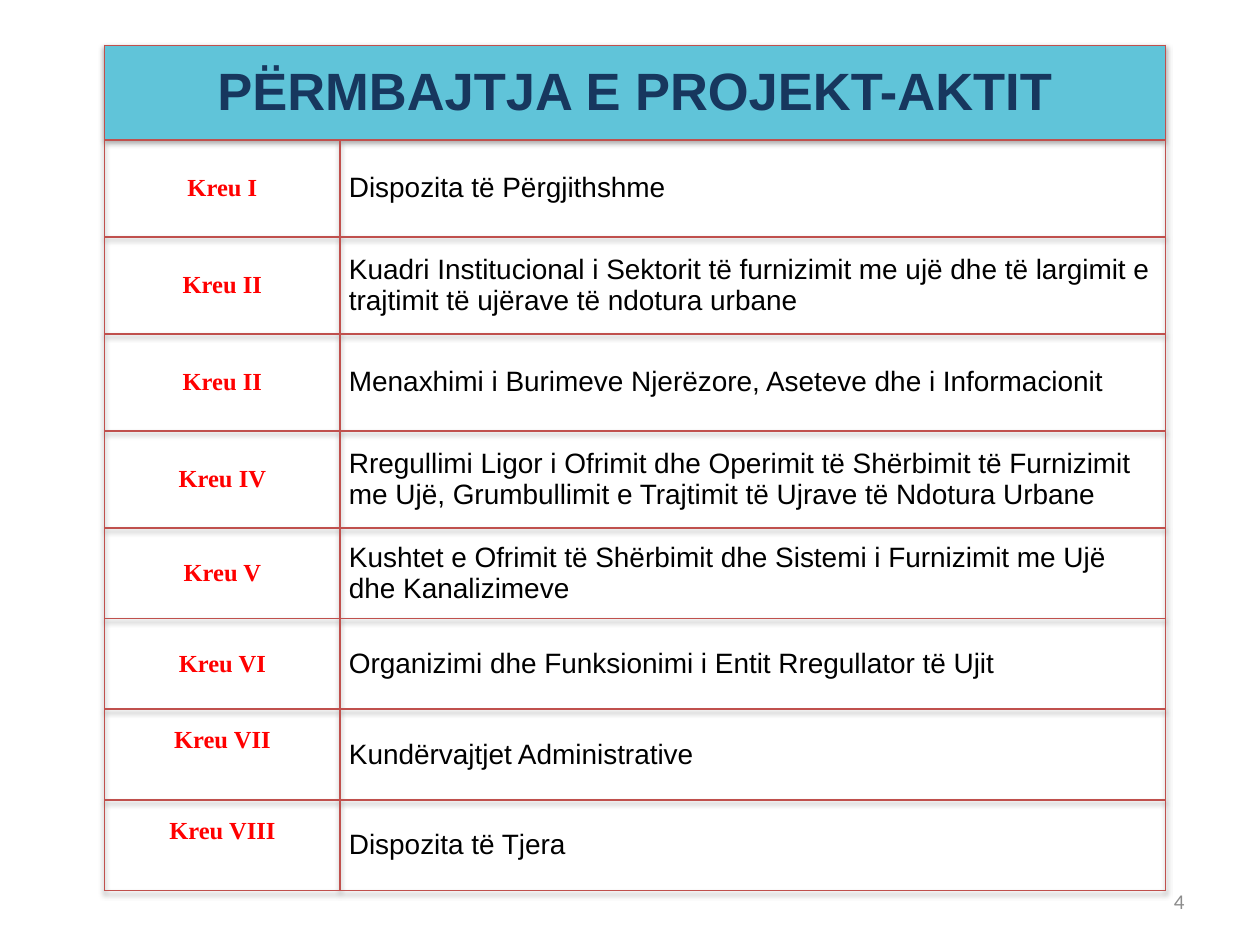
import pptx
import pptx.dml.color
import pptx.enum.text
import pptx.oxml
import pptx.oxml.ns
import pptx.util

Inches = pptx.util.Inches
Pt = pptx.util.Pt
RGBColor = pptx.dml.color.RGBColor
ALIGN = pptx.enum.text.PP_ALIGN
MIDDLE = pptx.enum.text.MSO_ANCHOR.MIDDLE

NAVY = RGBColor(0x17, 0x37, 0x5E)
AQUA = RGBColor(0x60, 0xC4, 0xD9)
RED = RGBColor(0xFF, 0x00, 0x00)
BLACK = RGBColor(0x00, 0x00, 0x00)
GREY = RGBColor(0x8C, 0x8C, 0x8C)
BORDER = RGBColor(0xC0, 0x50, 0x4D)
NAMESPACE = pptx.oxml.ns.nsdecls("a")

TITLE = "PËRMBAJTJA E PROJEKT-AKTIT"
CHAPTERS = [
    ("Kreu I", "Dispozita të Përgjithshme"),
    ("Kreu II", "Kuadri Institucional i Sektorit të furnizimit me ujë dhe të "
                "largimit e trajtimit të ujërave të ndotura urbane"),
    ("Kreu II", "Menaxhimi i Burimeve Njerëzore, Aseteve dhe i Informacionit"),
    ("Kreu IV", "Rregullimi Ligor i Ofrimit dhe Operimit të Shërbimit të Furnizimit "
                "me Ujë, Grumbullimit e Trajtimit të Ujrave të Ndotura Urbane"),
    ("Kreu V", "Kushtet e Ofrimit të Shërbimit dhe Sistemi i Furnizimit me Ujë "
               "dhe Kanalizimeve"),
    ("Kreu VI", "Organizimi dhe Funksionimi i Entit Rregullator të Ujit"),
    ("Kreu VII", "Kundërvajtjet Administrative"),
    ("Kreu VIII", "Dispozita të Tjera"),
]
COLUMN_WIDTHS = [1.87, 6.55]
ROW_HEIGHTS = [0.75] + [0.77] * 4 + [0.72] * 4
RAISED_ROWS = (7, 8)  # chapter labels that sit above the middle


class ContentsSlide:
    def __init__(self, presentation):
        self.slide = presentation.slides.add_slide(presentation.slide_layouts[6])

    def set_text(self, frame, text, font, size, color, bold=False, align=ALIGN.LEFT):
        paragraph = frame.paragraphs[0]
        paragraph.text = text
        paragraph.alignment = align
        paragraph.font.name = font
        paragraph.font.size = Pt(size)
        paragraph.font.bold = bold
        paragraph.font.color.rgb = color

    def table(self, left, top, widths, heights):
        table = self.slide.shapes.add_table(
            len(heights), len(widths), Inches(left), Inches(top),
            Inches(sum(widths)), Inches(sum(heights))).table
        table.first_row = table.horz_banding = False
        for column, width in zip(table.columns, widths):
            column.width = Inches(width)
        for row, height in zip(table.rows, heights):
            row.height = Inches(height)
        for cell in table.iter_cells():
            self.style_cell(cell)
        # Soft shadow below the grid
        table._tbl.tblPr.insert(0, pptx.oxml.parse_xml(
            f'<a:effectLst {NAMESPACE}><a:outerShdw blurRad="40000" dist="23000" '
            'dir="5400000" rotWithShape="0"><a:srgbClr val="000000">'
            '<a:alpha val="35000"/></a:srgbClr></a:outerShdw></a:effectLst>'))
        return table

    def style_cell(self, cell):
        cell.vertical_anchor = MIDDLE
        cell.margin_left = cell.margin_right = Inches(0.07)
        cell.margin_top = cell.margin_bottom = 0
        cell.fill.background()
        properties = cell._tc.get_or_add_tcPr()
        for position, side in enumerate(("lnL", "lnR", "lnT", "lnB")):
            properties.insert(position, pptx.oxml.parse_xml(
                f'<a:{side} {NAMESPACE} w="{Pt(1)}"><a:solidFill>'
                f'<a:srgbClr val="{BORDER}"/></a:solidFill></a:{side}>'))

    def page_number(self, number, left, top, width, height):
        frame = self.slide.shapes.add_textbox(
            Inches(left), Inches(top), Inches(width), Inches(height)).text_frame
        frame.word_wrap = True
        frame.vertical_anchor = MIDDLE
        self.set_text(frame, number, "Calibri", 12, GREY, align=ALIGN.RIGHT)


def main():
    presentation = pptx.Presentation()
    presentation.slide_width = Inches(10)
    presentation.slide_height = Inches(7.5)
    contents = ContentsSlide(presentation)

    # Title row
    table = contents.table(0.83, 0.36, COLUMN_WIDTHS, ROW_HEIGHTS)
    title = table.cell(0, 0)
    title.merge(table.cell(0, 1))
    title.fill.solid()
    title.fill.fore_color.rgb = AQUA
    contents.set_text(title.text_frame, TITLE, "Arial", 30, NAVY, True, ALIGN.CENTER)

    # Chapter rows
    for row, (chapter, subject) in enumerate(CHAPTERS, start=1):
        label, description = table.cell(row, 0), table.cell(row, 1)
        contents.set_text(label.text_frame, chapter, "Times New Roman", 14, RED,
                          True, ALIGN.CENTER)
        contents.set_text(description.text_frame, subject, "Arial", 16, BLACK)
        if row in RAISED_ROWS:
            label.margin_bottom = Inches(0.22)

    # Page number
    contents.page_number("4", 7.17, 6.95, 2.33, 0.4)
    presentation.save("out.pptx")


if __name__ == "__main__":
    main()
